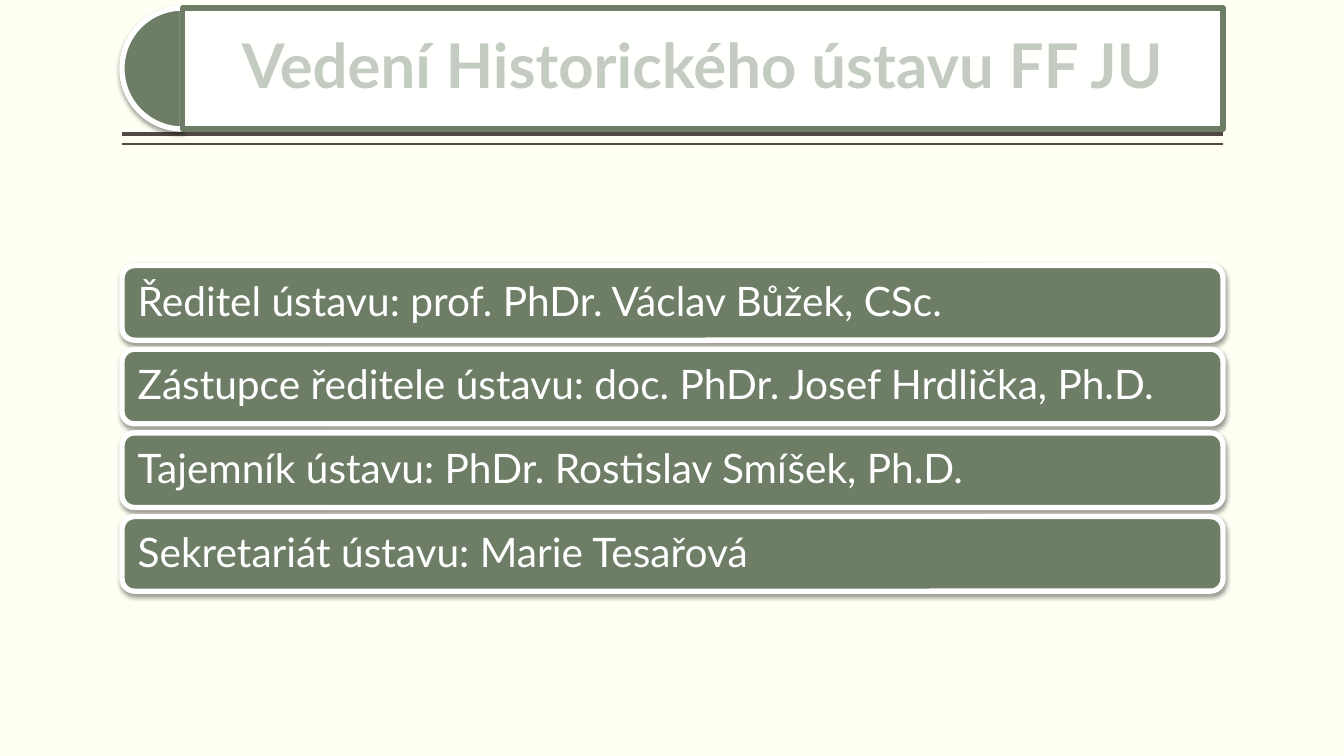
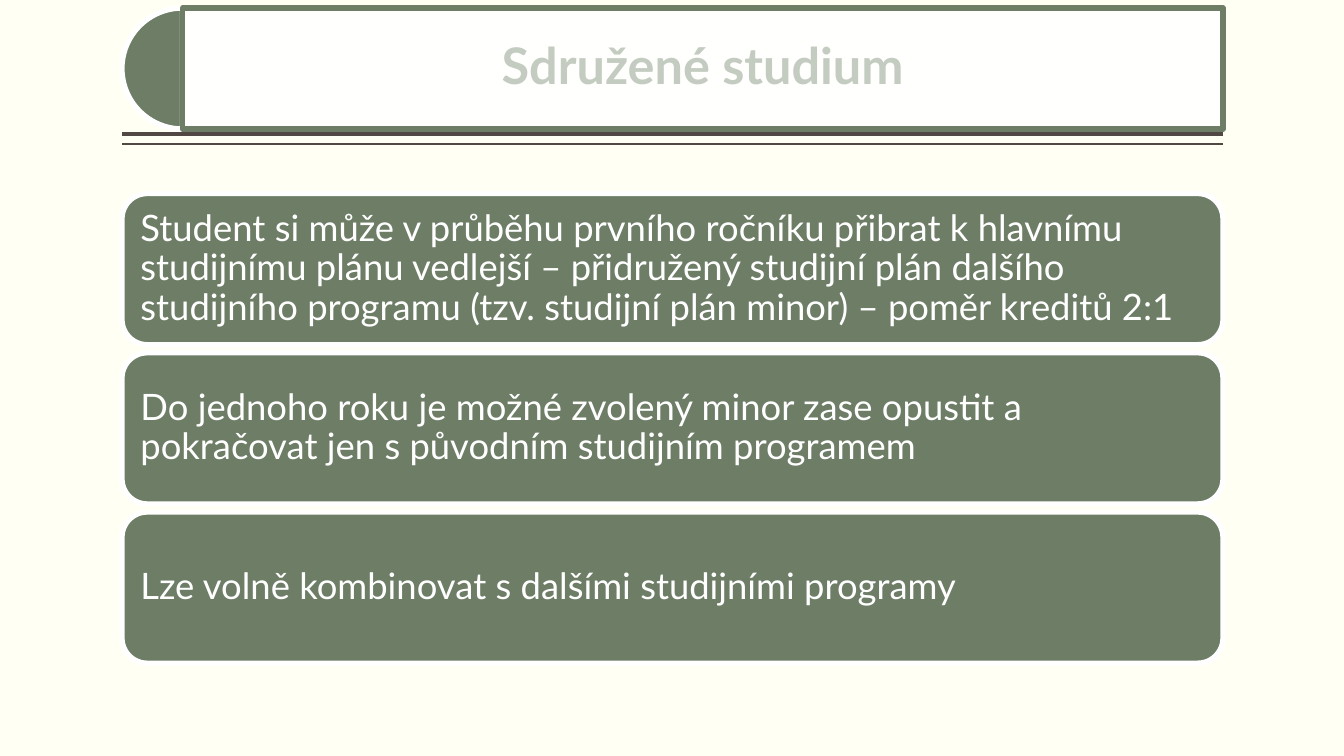
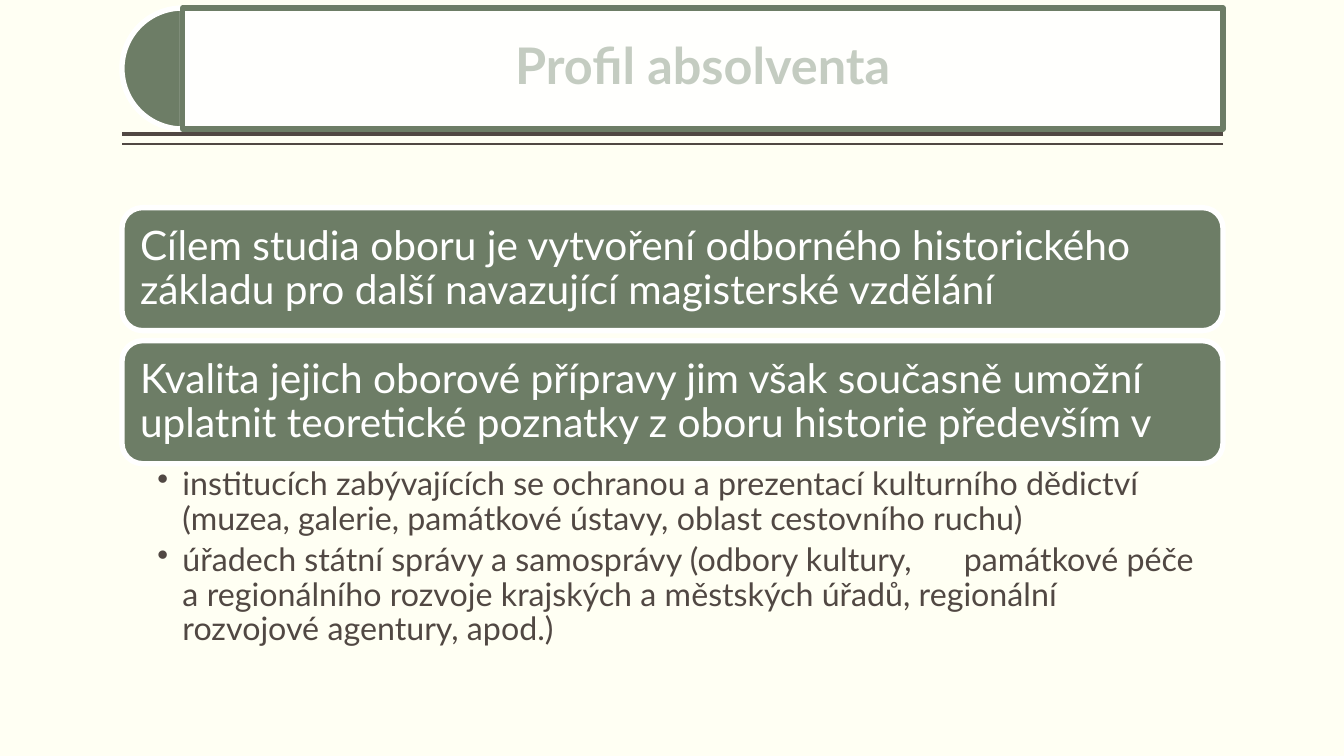
from pptx import Presentation
from pptx.dml.color import RGBColor
from pptx.enum.shapes import MSO_CONNECTOR, MSO_SHAPE
from pptx.enum.text import MSO_ANCHOR, PP_ALIGN
from pptx.oxml.ns import qn
from pptx.util import Inches, Pt
from lxml.etree import SubElement

IVORY = RGBColor(0xFF, 0xFF, 0xF3)
GREEN = RGBColor(0x6D, 0x7D, 0x66)
PALE_GREEN = RGBColor(0xC4, 0xCC, 0xC1)
BROWN = RGBColor(0x51, 0x48, 0x43)
WHITE = RGBColor(0xFF, 0xFF, 0xFF)

FONT = "Lato"
LEFT, WIDTH = 1.21, 10.92
RIGHT = LEFT + WIDTH
BODY_MIDDLE = 4.25
TITLE_TOP, TITLE_HEIGHT = 0.08, 1.2
BORDER = 3.8
RULES = [(1.33, 3), (1.43, 1)]

SLIDES = [
    {
        "title": "Vedení Historického ústavu FF JU", "title_size": 44,
        "size": 29, "height": 0.74, "gap": 0.09, "shadow": True,
        "cards": [
            "Ředitel ústavu: prof. PhDr. Václav Bůžek, CSc.",
            "Zástupce ředitele ústavu: doc. PhDr. Josef Hrdlička, Ph.D.",
            "Tajemník ústavu: PhDr. Rostislav Smíšek, Ph.D.",
            "Sekretariát ústavu: Marie Tesařová",
        ],
    },
    {
        "title": "Sdružené studium", "title_size": 36,
        "size": 26, "height": 1.5, "gap": 0.08,
        "cards": [
            "Student si může v průběhu prvního ročníku přibrat k hlavnímu "
            "studijnímu plánu vedlejší – přidružený studijní plán dalšího "
            "studijního programu (tzv. studijní plán minor) – poměr kreditů 2:1",
            "Do jednoho roku je možné zvolený minor zase opustit a "
            "pokračovat jen s původním studijním programem",
            "Lze volně kombinovat s dalšími studijními programy",
        ],
    },
    {
        "title": "Profil absolventa", "title_size": 36,
        "size": 29, "height": 1.22, "gap": 0.1,
        "cards": [
            "Cílem studia oboru je vytvoření odborného historického základu "
            "pro další navazující magisterské vzdělání",
            "Kvalita jejich oborové přípravy jim však současně umožní uplatnit "
            "teoretické poznatky z oboru historie především v",
        ],
        "bullets_height": 1.84,
        "bullets": [
            "institucích zabývajících se ochranou a prezentací kulturního dědictví "
            "(muzea, galerie, památkové ústavy, oblast cestovního ruchu)",
            "úřadech státní správy a samosprávy (odbory kultury, \tpamátkové péče "
            "a regionálního rozvoje krajských a městských úřadů, regionální "
            "rozvojové agentury, apod.)",
        ],
    },
]


def set_all(target, values):
    for name, value in values.items():
        setattr(target, name, value)


def add_box(s, kind, box, fill, line, shadow=False):
    sp = s.shapes.add_shape(kind, *map(Inches, box))
    sp.fill.solid()
    sp.fill.fore_color.rgb = fill
    sp.line.color.rgb = line
    sp.line.width = Pt(BORDER)
    sp.shadow.inherit = False
    if shadow:
        effects = sp.element.spPr.find(qn("a:effectLst"))
        outer = SubElement(effects, qn("a:outerShdw"), blurRad=str(Pt(3.5)),
                           dist=str(Pt(2)), dir="5400000", rotWithShape="0")
        color = SubElement(outer, qn("a:srgbClr"), val="000000")
        SubElement(color, qn("a:alpha"), val="38000")
    return sp


def set_frame(tf, insets, anchor):
    sides = ("margin_left", "margin_top", "margin_right", "margin_bottom")
    set_all(tf, dict(zip(sides, map(Inches, insets))))
    set_all(tf, {"word_wrap": True, "vertical_anchor": anchor})


def write(p, text, size, color, align=PP_ALIGN.LEFT, bold=False):
    set_all(p, {"alignment": align, "line_spacing": 0.9})
    r = p.add_run()
    r.text = text
    set_all(r.font, {"name": FONT, "size": Pt(size), "bold": bold})
    r.font.color.rgb = color


def fill_text(sp, text, size, color, **style):
    """Centre one paragraph vertically, with insets in proportion to its size."""
    set_frame(sp.text_frame, [round(size / 240, 2)] * 4, MSO_ANCHOR.MIDDLE)
    write(sp.text_frame.paragraphs[0], text, size, color, **style)


def add_rules(s):
    for y, weight in RULES:
        rule = s.shapes.add_connector(
            MSO_CONNECTOR.STRAIGHT, *map(Inches, (RIGHT, y, LEFT, y)))
        rule.line.color.rgb = BROWN
        rule.line.width = Pt(weight)
        SubElement(rule.element.spPr, qn("a:effectLst"))


def add_title(s, text, size, shadow):
    pie = add_box(s, MSO_SHAPE.PIE, (LEFT, TITLE_TOP, TITLE_HEIGHT, TITLE_HEIGHT),
                  GREEN, WHITE, shadow)
    pie.adjustments[0], pie.adjustments[1] = 54, 162
    radius = TITLE_HEIGHT / 2
    banner = add_box(s, MSO_SHAPE.RECTANGLE,
                     (LEFT + radius, TITLE_TOP, WIDTH - radius, TITLE_HEIGHT),
                     WHITE, GREEN)
    color = banner.element.spPr.find(qn("a:solidFill")).find(qn("a:srgbClr"))
    SubElement(color, qn("a:alpha"), val="90000")
    fill_text(banner, text, size, PALE_GREEN, align=PP_ALIGN.CENTER, bold=True)


def add_bullets(s, top, height, items, size=23):
    tf = s.shapes.add_textbox(*map(Inches, (LEFT, top, WIDTH, height))).text_frame
    set_frame(tf, (0.35, 0.04, 0.23, 0.04), MSO_ANCHOR.TOP)
    for i, item in enumerate(items):
        p = tf.add_paragraph() if i else tf.paragraphs[0]
        write(p, item, size, BROWN)
        p.space_after = Pt(0.2 * size)
        pPr = p._p.get_or_add_pPr()
        pPr.set("marL", str(Inches(0.25)))
        pPr.set("indent", str(Inches(-0.25)))
        SubElement(pPr, qn("a:buChar"), char="•")


def add_body(s, cards, size, height, gap, shadow, bullets, bullets_height):
    """Stack the cards and bullets evenly around the middle of the body."""
    pitch = height + gap
    cards_height = len(cards) * pitch - gap
    top = BODY_MIDDLE - (cards_height + bullets_height) / 2
    for i, text in enumerate(cards):
        card = add_box(s, MSO_SHAPE.ROUNDED_RECTANGLE,
                       (LEFT, top + i * pitch, WIDTH, height), GREEN, WHITE, shadow)
        fill_text(card, text, size, WHITE)
    if bullets:
        add_bullets(s, top + cards_height, bullets_height, bullets)


def main():
    prs = Presentation()
    set_all(prs, {"slide_width": Inches(13.33), "slide_height": Inches(7.5)})
    background = prs.slide_master.background.fill
    background.solid()
    background.fore_color.rgb = IVORY
    for page in SLIDES:
        s = prs.slides.add_slide(prs.slide_layouts[6])
        shadow = page.get("shadow", False)
        add_rules(s)
        add_title(s, page["title"], page["title_size"], shadow)
        add_body(s, page["cards"], page["size"], page["height"], page["gap"], shadow,
                 page.get("bullets", []), page.get("bullets_height", 0))
    prs.save("out.pptx")


if __name__ == "__main__":
    main()
